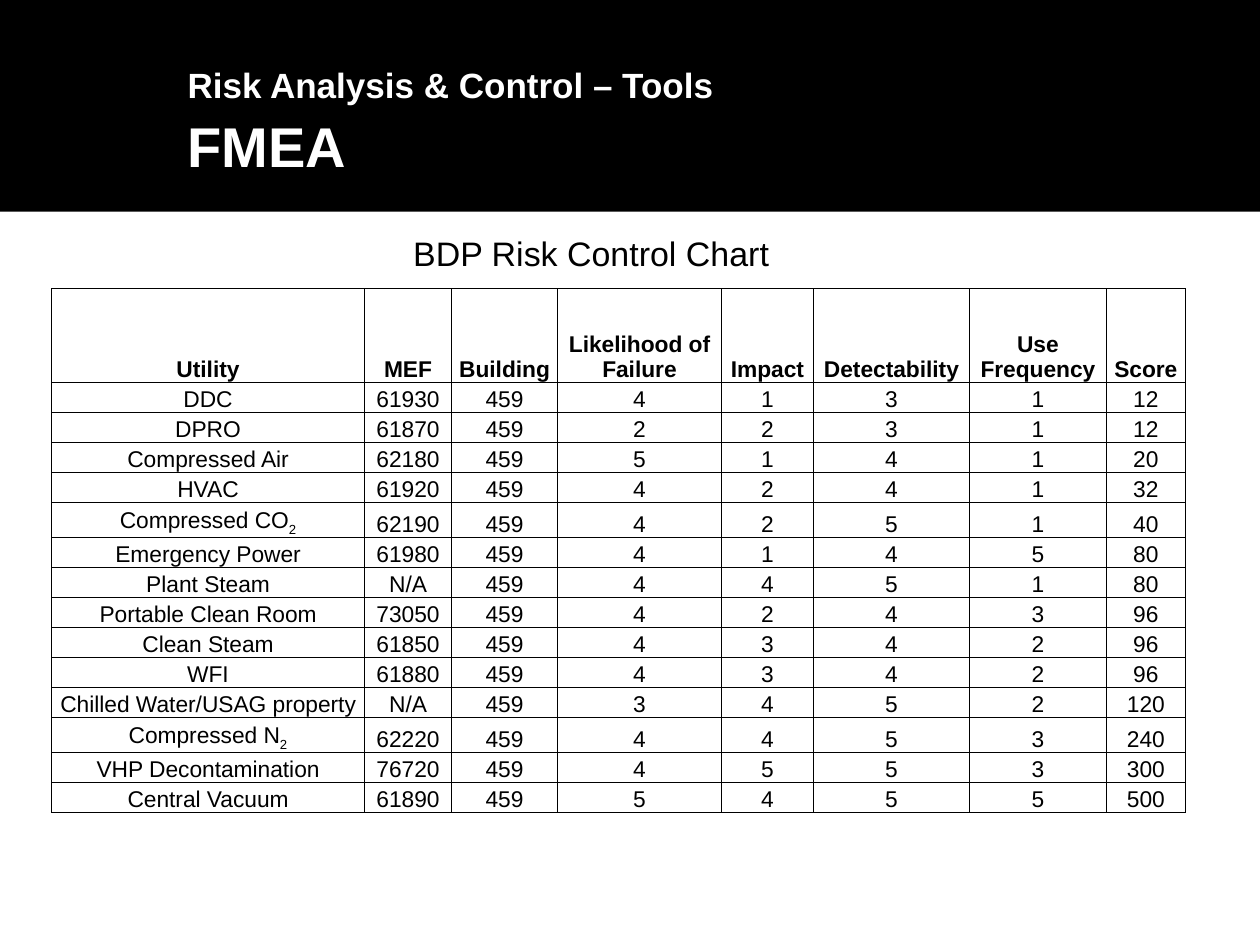
from lxml.etree import SubElement
from pptx import Presentation
from pptx.dml.color import RGBColor
from pptx.enum.shapes import MSO_SHAPE
from pptx.enum.text import MSO_ANCHOR, MSO_AUTO_SIZE, PP_ALIGN
from pptx.oxml.ns import qn
from pptx.util import Pt

COLORS = {"black": "000000", "white": "FFFFFF"}
HEADER = ["Utility", "MEF", "Building", "Likelihood of Failure", "Impact",
          "Detectability", "Use Frequency", "Score"]
BUILDING = 459
# Utility (an underscore marks a subscript), MEF, likelihood, impact,
# detectability, use frequency, score
UTILITIES = [
    ("DDC", 61930, 4, 1, 3, 1, 12),
    ("DPRO", 61870, 2, 2, 3, 1, 12),
    ("Compressed Air", 62180, 5, 1, 4, 1, 20),
    ("HVAC", 61920, 4, 2, 4, 1, 32),
    ("Compressed CO_2", 62190, 4, 2, 5, 1, 40),
    ("Emergency Power", 61980, 4, 1, 4, 5, 80),
    ("Plant Steam", "N/A", 4, 4, 5, 1, 80),
    ("Portable Clean Room", 73050, 4, 2, 4, 3, 96),
    ("Clean Steam", 61850, 4, 3, 4, 2, 96),
    ("WFI", 61880, 4, 3, 4, 2, 96),
    ("Chilled Water/USAG property", "N/A", 3, 4, 5, 2, 120),
    ("Compressed N_2", 62220, 4, 4, 5, 3, 240),
    ("VHP Decontamination", 76720, 4, 5, 5, 3, 300),
    ("Central Vacuum", 61890, 5, 4, 5, 5, 500),
]
COL_WIDTHS = [178.9, 49.7, 60.6, 93.7, 52.6, 89.1, 78.3, 45.1]
HEADER_HEIGHT, ROW_HEIGHT, SUBSCRIPT_HEIGHT = 53.7, 17.2, 19.8


def rgb(name):
    return RGBColor.from_string(COLORS[name])


def set_attrs(obj, **values):
    for name, value in values.items():
        setattr(obj, name, value)


def add_run(p, text, size, color="black", bold=False):
    r = p.add_run()
    r.text = text
    set_attrs(r.font, name="Arial", size=Pt(size), bold=bold)
    r.font.color.rgb = rgb(color)
    return r


def add_band(s):
    band = s.shapes.add_shape(MSO_SHAPE.RECTANGLE, 0, 0, Pt(720), Pt(121))
    band.shadow.inherit = False
    band.fill.solid()
    band.fill.fore_color.rgb = rgb("black")
    band.line.fill.background()
    s.shapes._spTree.insert(2, band._element)  # behind the title


def format_title(s):
    sp = s.shapes.title
    set_attrs(sp, left=Pt(100), top=Pt(15.8), width=Pt(605), height=Pt(104.4))
    tf = sp.text_frame
    set_attrs(tf, vertical_anchor=MSO_ANCHOR.MIDDLE, word_wrap=True,
              auto_size=MSO_AUTO_SIZE.NONE)
    p = tf.paragraphs[0]
    set_attrs(p, alignment=PP_ALIGN.LEFT, line_spacing=1.1)
    add_run(p, "Risk Analysis & Control – Tools", 20, "white", True)
    p.add_line_break()
    add_run(p, "FMEA", 32, "white", True)


def add_caption(s, text):
    sp = s.shapes.add_textbox(Pt(229), Pt(133.2), Pt(232), Pt(24))
    tf = sp.text_frame
    set_attrs(tf, word_wrap=True, margin_top=Pt(6), margin_bottom=0)
    p = tf.paragraphs[0]
    p.line_spacing = 0.7
    add_run(p, text, 19.4)


def add_borders(cell):
    tc_pr = cell._tc.get_or_add_tcPr()
    for side in ("a:lnL", "a:lnR", "a:lnT", "a:lnB"):
        ln = SubElement(tc_pr, qn(side), w=str(Pt(0.5)))
        fill = SubElement(ln, qn("a:solidFill"))
        SubElement(fill, qn("a:srgbClr"), val=COLORS["black"])


def fill_cell(cell, text, bold):
    set_attrs(cell, vertical_anchor=MSO_ANCHOR.BOTTOM, margin_left=Pt(0.7),
              margin_right=Pt(0.7), margin_top=Pt(0.7), margin_bottom=0)
    add_borders(cell)
    cell.fill.solid()
    cell.fill.fore_color.rgb = rgb("white")
    p = cell.text_frame.paragraphs[0]
    p.alignment = PP_ALIGN.CENTER
    base, _, subscript = str(text).partition("_")
    add_run(p, base, 13, bold=bold)
    if subscript:
        r = add_run(p, subscript, 13, bold=bold)
        r.font._element.set("baseline", "-25000")


def add_risk_table(s):
    rows = [HEADER] + [(name, mef, BUILDING, *scores)
                       for name, mef, *scores in UTILITIES]
    heights = [HEADER_HEIGHT] + [SUBSCRIPT_HEIGHT if "_" in u[0] else ROW_HEIGHT
                                 for u in UTILITIES]
    table = s.shapes.add_table(len(rows), len(HEADER), Pt(29.4), Pt(164.9),
                               Pt(sum(COL_WIDTHS)), Pt(sum(heights))).table
    table.horz_banding = False
    for column, width in zip(table.columns, COL_WIDTHS):
        column.width = Pt(width)
    for i, (values, height) in enumerate(zip(rows, heights)):
        table.rows[i].height = Pt(height)
        for j, value in enumerate(values):
            fill_cell(table.cell(i, j), value, bold=i == 0)


def main():
    prs = Presentation()
    set_attrs(prs, slide_width=Pt(720), slide_height=Pt(540))
    s = prs.slides.add_slide(prs.slide_layouts[5])  # title only

    # Heading
    add_band(s)
    format_title(s)

    # Risk chart
    add_caption(s, "BDP Risk Control Chart")
    add_risk_table(s)

    prs.save("out.pptx")


if __name__ == "__main__":
    main()
